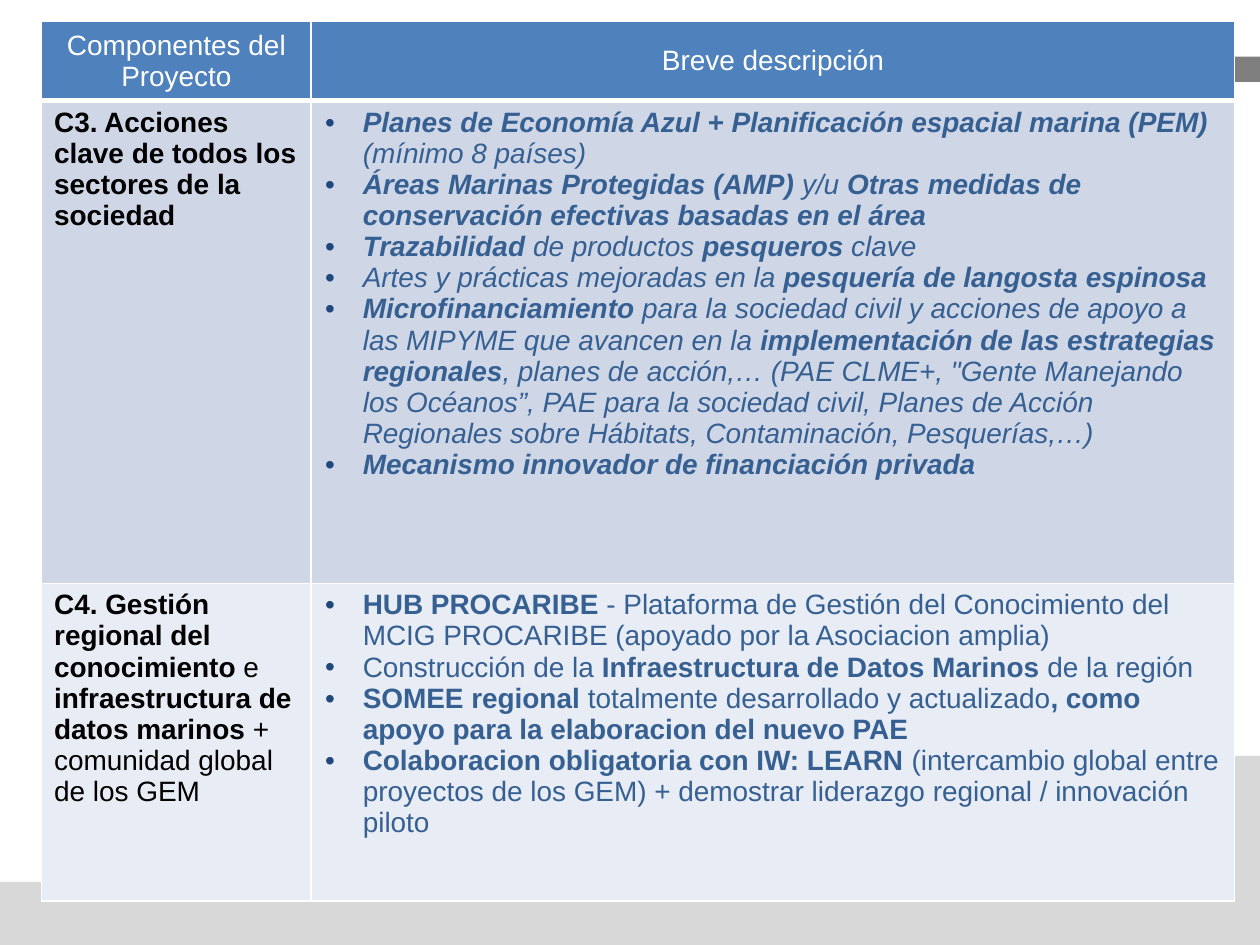
from dataclasses import dataclass

import pptx
import pptx.dml.color
import pptx.enum.shapes
import pptx.enum.text
import pptx.oxml.ns
import pptx.util
from lxml import etree
from pptx.dml.color import RGBColor
from pptx.util import Inches, Pt

WHITE = RGBColor(0xFF, 0xFF, 0xFF)
BLACK = RGBColor(0x00, 0x00, 0x00)
BAR_GRAY = RGBColor(0x7F, 0x7F, 0x7F)
WAVE_GRAY = RGBColor(0xD8, 0xD8, 0xD8)
HEADER_BLUE = RGBColor(0x4F, 0x81, 0xBD)
BAND_DARK = RGBColor(0xCF, 0xD7, 0xE7)
BAND_LIGHT = RGBColor(0xE8, 0xEC, 0xF4)
TEXT_BLUE = RGBColor(0x36, 0x60, 0x92)
BULLET_BLUE = RGBColor(0x1F, 0x49, 0x7D)


@dataclass(frozen=True)
class Run:
    text: str
    bold: bool = False


def strong(text: str) -> Run:
    return Run(text, True)


@dataclass(frozen=True)
class Component:
    title: list[Run]
    points: list[list[Run]]
    fill: RGBColor
    italic: bool


HEADINGS = ["Componentes del Proyecto", "Breve descripción"]
COMPONENTS = [
    Component(
        [strong("C3. Acciones clave de todos los sectores de la sociedad")],
        [
            [strong("Planes de Economía Azul + Planificación espacial marina (PEM)"),
             Run(" (mínimo 8 países)")],
            [strong("Áreas Marinas Protegidas (AMP) "), Run("y/u "),
             strong("Otras medidas de conservación efectivas basadas en el área")],
            [strong("Trazabilidad"), Run(" de productos "),
             strong("pesqueros"), Run(" clave")],
            [Run("Artes y prácticas mejoradas en la "),
             strong("pesquería de langosta espinosa")],
            [strong("Microfinanciamiento "),
             Run("para la sociedad civil y acciones de apoyo a las MIPYME "
                 "que avancen en la "),
             strong("implementación de las estrategias regionales"),
             Run(", planes de acción,… (PAE CLME+, \"Gente Manejando los Océanos”, "
                 "PAE para la sociedad civil, Planes de Acción Regionales sobre "
                 "Hábitats, Contaminación, Pesquerías,…)")],
            [strong("Mecanismo innovador de financiación privada")],
        ],
        BAND_DARK, True),
    Component(
        [strong("C4. Gestión regional del conocimiento "), Run("e "),
         strong("infraestructura de datos marinos "),
         Run("+ comunidad global de los GEM")],
        [
            [strong("HUB PROCARIBE"),
             Run(" - Plataforma de Gestión del Conocimiento del MCIG PROCARIBE "
                 "(apoyado por la Asociacion amplia)")],
            [Run("Construcción de la "), strong("Infraestructura de Datos Marinos "),
             Run("de la región")],
            [strong("SOMEE regional "), Run("totalmente desarrollado y actualizado"),
             strong(", como apoyo para la elaboracion del nuevo PAE")],
            [strong("Colaboracion obligatoria con IW: LEARN "),
             Run("(intercambio global entre proyectos de los GEM) + demostrar "
                 "liderazgo regional / innovación piloto")],
        ],
        BAND_LIGHT, False),
]


def add_child(parent, tag: str, **attributes: str):
    return etree.SubElement(parent, pptx.oxml.ns.qn(tag), **attributes)


def paint(shape, color: RGBColor) -> None:
    shape.shadow.inherit = False
    shape.fill.solid()
    shape.fill.fore_color.rgb = color
    shape.line.fill.background()


def curve(start, control1, control2, end, steps: int = 24) -> list[tuple]:
    """Points along a cubic curve, without its start."""
    points = []
    for step in range(1, steps + 1):
        t = step / steps
        weights = ((1 - t) ** 3, 3 * t * (1 - t) ** 2, 3 * t * t * (1 - t), t ** 3)
        corners = (start, control1, control2, end)
        points.append(tuple(sum(w * c[axis] for w, c in zip(weights, corners))
                            for axis in (0, 1)))
    return points


def style_cell(cell, color: RGBColor, bottom: float = 1, top: float = 1) -> None:
    properties = cell._tc.get_or_add_tcPr()
    for side, width in (("L", 1), ("R", 1), ("T", top), ("B", bottom)):
        border = add_child(properties, f"a:ln{side}", w=str(Pt(width)))
        add_child(add_child(border, "a:solidFill"), "a:srgbClr", val=str(WHITE))
    cell.fill.solid()
    cell.fill.fore_color.rgb = color


def write_runs(paragraph, runs: list[Run], color: RGBColor, italic: bool = False) -> None:
    for part in runs:
        run = paragraph.add_run()
        run.text = part.text
        run.font.name = "Arial"
        run.font.size = Pt(16)
        run.font.bold = part.bold
        run.font.italic = italic
        run.font.color.rgb = color


def add_bullet(paragraph) -> None:
    properties = paragraph._p.get_or_add_pPr()
    properties.set("marL", str(Inches(0.31)))
    properties.set("indent", str(Inches(-0.3)))
    add_child(add_child(properties, "a:buClr"), "a:srgbClr", val=str(BULLET_BLUE))
    add_child(properties, "a:buFont", typeface="Arial")
    add_child(properties, "a:buChar", char="•")


def write_points(cell, component: Component) -> None:
    frame = cell.text_frame
    for index, runs in enumerate(component.points):
        paragraph = frame.add_paragraph() if index else frame.paragraphs[0]
        add_bullet(paragraph)
        write_runs(paragraph, runs, TEXT_BLUE, component.italic)


def add_backdrop(slide) -> None:
    bar = slide.shapes.add_shape(pptx.enum.shapes.MSO_SHAPE.RECTANGLE,
                                 Inches(4.63), Inches(0.45), Inches(5.37), Inches(0.2))
    paint(bar, BAR_GRAY)

    right, crest, left = (10.04, 6.46), (3.78, 6.63), (-0.02, 6.51)
    outline = [right, *curve(right, (8.77, 6.22), (6.79, 6.16), crest),
               *curve(crest, (1, 7.07), (0.19, 6.68), left), (-0.02, 7.5)]
    builder = slide.shapes.build_freeform(10.04, 7.5, scale=Inches(1))
    builder.add_line_segments(outline, close=True)
    paint(builder.convert_to_shape(), WAVE_GRAY)


def add_components_table(slide) -> None:
    table = slide.shapes.add_table(len(COMPONENTS) + 1, len(HEADINGS), Inches(0.33),
                                   Inches(0.17), Inches(9.47), Inches(6.98)).table
    for column, width in zip(table.columns, (2.14, 7.33)):
        column.width = Inches(width)
    for row, height in zip(table.rows, (0.63, 3.83, 2.52)):
        row.height = Inches(height)

    # Header row
    for column, heading in enumerate(HEADINGS):
        cell = table.cell(0, column)
        style_cell(cell, HEADER_BLUE, bottom=3)
        cell.vertical_anchor = pptx.enum.text.MSO_ANCHOR.MIDDLE
        paragraph = cell.text_frame.paragraphs[0]
        paragraph.alignment = pptx.enum.text.PP_ALIGN.CENTER
        write_runs(paragraph, [Run(heading)], WHITE)

    # One row per component
    for row, component in enumerate(COMPONENTS, start=1):
        title, description = table.cell(row, 0), table.cell(row, 1)
        for cell in (title, description):
            style_cell(cell, component.fill, top=3 if row == 1 else 1)
        write_runs(title.text_frame.paragraphs[0], component.title, BLACK)
        write_points(description, component)


def main() -> None:
    presentation = pptx.Presentation()
    presentation.slide_width = Inches(10)
    presentation.slide_height = Inches(7.5)
    slide = presentation.slides.add_slide(presentation.slide_layouts[6])
    add_backdrop(slide)
    add_components_table(slide)
    presentation.save("out.pptx")


if __name__ == "__main__":
    main()
